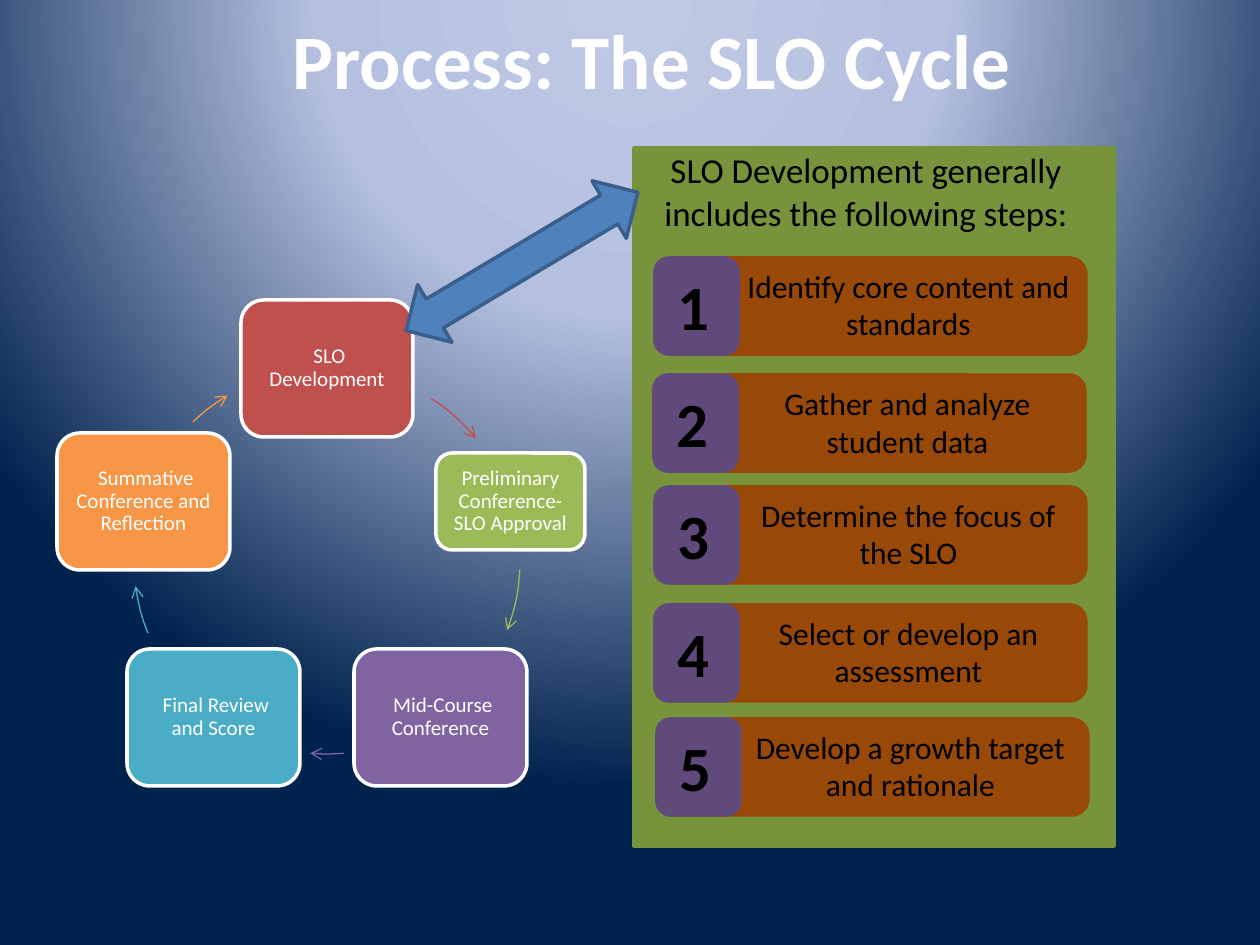
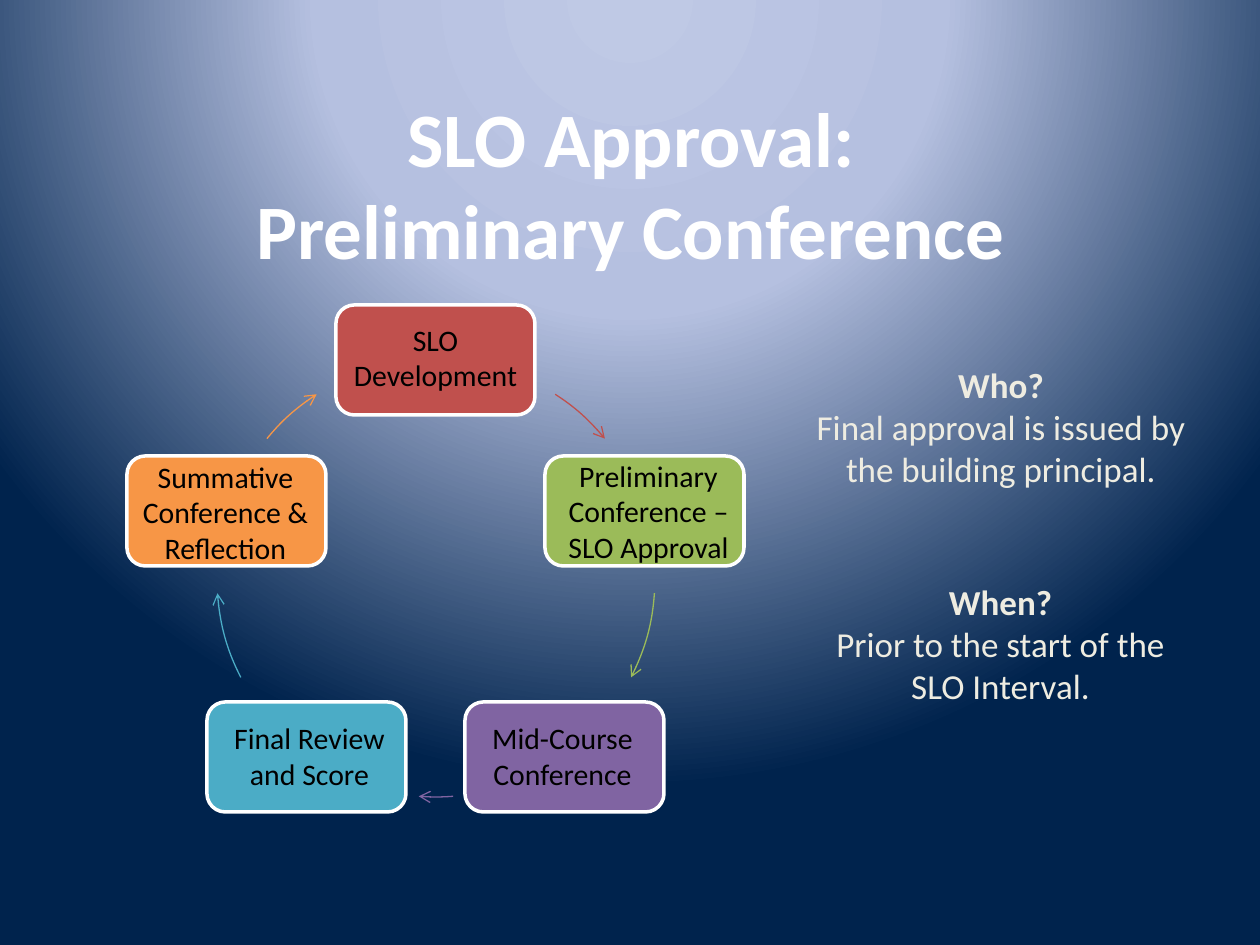
import pptx
import pptx.dml.color
import pptx.enum.shapes
import pptx.enum.text
import pptx.oxml
import pptx.oxml.ns
import pptx.util

PX_PER_INCH = 126
FONT = "Calibri"
WHITE, BLACK, CREAM = "FFFFFF", "000000", "EEECE1"
GREEN, BROWN, PURPLE = "77933C", "984807", "604A7B"
STAGE_COLORS = ["C0504D", "9BBB59", "8064A2", "4BACC6", "F79646"]
BACKGROUND_STOPS = [(0, "BFC9E5"), (40, "B5C0E0"), (100, "00234D")]
STEPS = [
    ("Identify core content and standards", 655, 258),
    ("Gather and analyze student data", 654, 375),
    ("Determine the focus of the SLO", 655, 487),
    ("Select or develop an assessment", 655, 605),
    ("Develop a growth target and rationale", 657, 719),
]
SHAPE = pptx.enum.shapes.MSO_SHAPE
ANCHOR = pptx.enum.text.MSO_ANCHOR


def px(n):
    return pptx.util.Emu(round(n * 914400 / PX_PER_INCH))


def rgb(color):
    return pptx.dml.color.RGBColor.from_string(color)


def add_xml(parent, tag, content="", attributes=""):
    ns = pptx.oxml.ns.nsdecls("a")
    parent.append(pptx.oxml.parse_xml(
        f"<a:{tag} {ns} {attributes}>{content}</a:{tag}>"))


def set_background(master):
    master.background.fill.gradient()
    grad = master.element.find(".//" + pptx.oxml.ns.qn("a:gradFill"))
    for child in list(grad):
        grad.remove(child)
    stops = "".join(
        f'<a:gs pos="{pos * 1000}"><a:srgbClr val="{color}"/></a:gs>'
        for pos, color in BACKGROUND_STOPS)
    add_xml(grad, "gsLst", stops)
    add_xml(grad, "path", '<a:fillToRect l="50000" t="-80000" '
                          'r="50000" b="180000"/>', 'path="circle"')


def write(tf, lines, size, color, bold=False, spacing=None):
    tf.word_wrap = True
    for i, line in enumerate(lines):
        p = tf.paragraphs[0] if i == 0 else tf.add_paragraph()
        p.text = line
        p.alignment = pptx.enum.text.PP_ALIGN.CENTER
        p.line_spacing = spacing
        p.font.name = FONT
        p.font.size = pptx.util.Pt(size)
        p.font.bold = bold
        p.font.color.rgb = rgb(color)


def add_slide(prs, title, at):
    s = prs.slides.add_slide(prs.slide_layouts[5])
    sp = s.shapes.title
    sp.left, sp.top, sp.width, sp.height = map(px, at)
    tf = sp.text_frame
    tf.auto_size = pptx.enum.text.MSO_AUTO_SIZE.NONE
    tf.vertical_anchor = ANCHOR.TOP
    write(tf, title, 44, WHITE, bold=True)
    return s


def add_block(s, kind, at, fill, line, margins=(7, 6, 7, 6)):
    sp = s.shapes.add_shape(kind, *map(px, at))
    sp.shadow.inherit = False
    sp.fill.solid()
    sp.fill.fore_color.rgb = rgb(fill)
    sp.line.color.rgb = rgb(line)
    sp.line.width = pptx.util.Pt(2)
    tf = sp.text_frame
    tf.vertical_anchor = ANCHOR.MIDDLE
    (tf.margin_left, tf.margin_top,
     tf.margin_right, tf.margin_bottom) = map(px, margins)
    return sp


def add_arc_arrow(s, circle, start, end, color):
    left, top, size = circle
    sp = s.shapes.add_shape(SHAPE.ARC, px(left), px(top), px(size), px(size))
    for i, angle in enumerate((start, end)):
        sp.adjustments[i] = (angle - 90) % 360 * 0.6
    sp.shadow.inherit = False
    sp.fill.background()
    sp.line.color.rgb = rgb(color)
    sp.line.width = pptx.util.Pt(0.75)
    add_xml(sp.line._get_or_add_ln(), "tailEnd", attributes='type="arrow"')


def add_cycle(s, stages, circle, arcs, size, color, spacing=None):
    for (label, at, dx, dy), arc, fill in zip(stages, arcs, STAGE_COLORS):
        sp = add_block(s, SHAPE.ROUNDED_RECTANGLE, at, fill, WHITE,
                       (7 + dx, 6 + dy, 7 - dx, 6 - dy))
        write(sp.text_frame, [label], size, color, spacing=spacing)
        add_arc_arrow(s, circle, *arc, fill)


def add_step(s, number, label, left, top):
    bar = add_block(s, SHAPE.ROUNDED_RECTANGLE, (left, top, 431, 96),
                    BROWN, BROWN, (84, 3, 8, 6))
    write(bar.text_frame, [label], 18, BLACK)
    badge = add_block(s, SHAPE.ROUNDED_RECTANGLE, (left, top, 83, 96),
                      PURPLE, PURPLE, (0, 5, 6, 7))
    write(badge.text_frame, [str(number)], 36, BLACK, bold=True)


def add_answer(s, question, answer, at):
    tf = s.shapes.add_textbox(*map(px, at)).text_frame
    write(tf, [question, answer], 20, CREAM)
    tf.paragraphs[0].font.bold = True


def build_process_slide(prs):
    s = add_slide(prs, ["Process: The SLO Cycle"], (172, 6, 960, 115))
    stages = [
        (" SLO Development", (241, 300, 172, 137), 0, 0),
        ("Preliminary Conference-SLO Approval", (436, 453, 149, 97), 0, 0),
        (" Mid-Course Conference", (354, 649, 173, 137), 0, 0),
        (" Final Review and Score", (127, 649, 173, 137), 0, 0),
        (" Summative Conference and Reflection", (57, 433, 173, 137), 0, 0),
    ]
    arcs = [(32.5, 50.5), (92.6, 111), (175, 185), (248, 262.5), (316, 329)]
    add_cycle(s, stages, (134, 368, 386), arcs, 12, WHITE, 0.9)
    panel = add_block(s, SHAPE.RECTANGLE, (634, 148, 480, 698),
                      GREEN, GREEN, (0, 1, 16, 6))
    panel.text_frame.vertical_anchor = ANCHOR.TOP
    write(panel.text_frame,
          ["SLO Development generally includes the following steps:"],
          20, BLACK)
    for number, step in enumerate(STEPS, 1):
        add_step(s, number, *step)
    arrow = add_block(s, SHAPE.LEFT_RIGHT_ARROW, (387, 228, 270, 67),
                      "4F81BD", "3A5F8C")
    arrow.rotation = 329.2


def build_approval_slide(prs):
    s = add_slide(prs, ["SLO Approval:", "Preliminary Conference"],
                  (151, 84, 960, 166))
    stages = [
        ("SLO Development", (336, 305, 199, 110), 0, -3),
        ("Preliminary Conference – SLO Approval",
         (545, 456, 199, 110), 4, 0),
        ("Mid-Course Conference", (465, 702, 199, 110), -2, -1),
        ("Final Review and Score", (207, 702, 199, 110), 3, -1),
        ("Summative Conference & Reflection",
         (127, 456, 199, 110), -1, 1),
    ]
    arcs = [(33, 50.5), (94, 117), (175.5, 184.5), (243, 266), (309.5, 327)]
    add_cycle(s, stages, (217, 359, 438), arcs, 17, BLACK)
    add_answer(s, "When?", "Prior to the start of the SLO Interval.",
               (822, 574, 357, 140))
    add_answer(s, "Who?",
               "Final approval is issued by the building principal.",
               (796, 357, 410, 140))


def main():
    prs = pptx.Presentation()
    prs.slide_width, prs.slide_height = px(1260), px(945)
    set_background(prs.slide_master)
    build_process_slide(prs)
    build_approval_slide(prs)
    prs.save("out.pptx")


if __name__ == "__main__":
    main()
